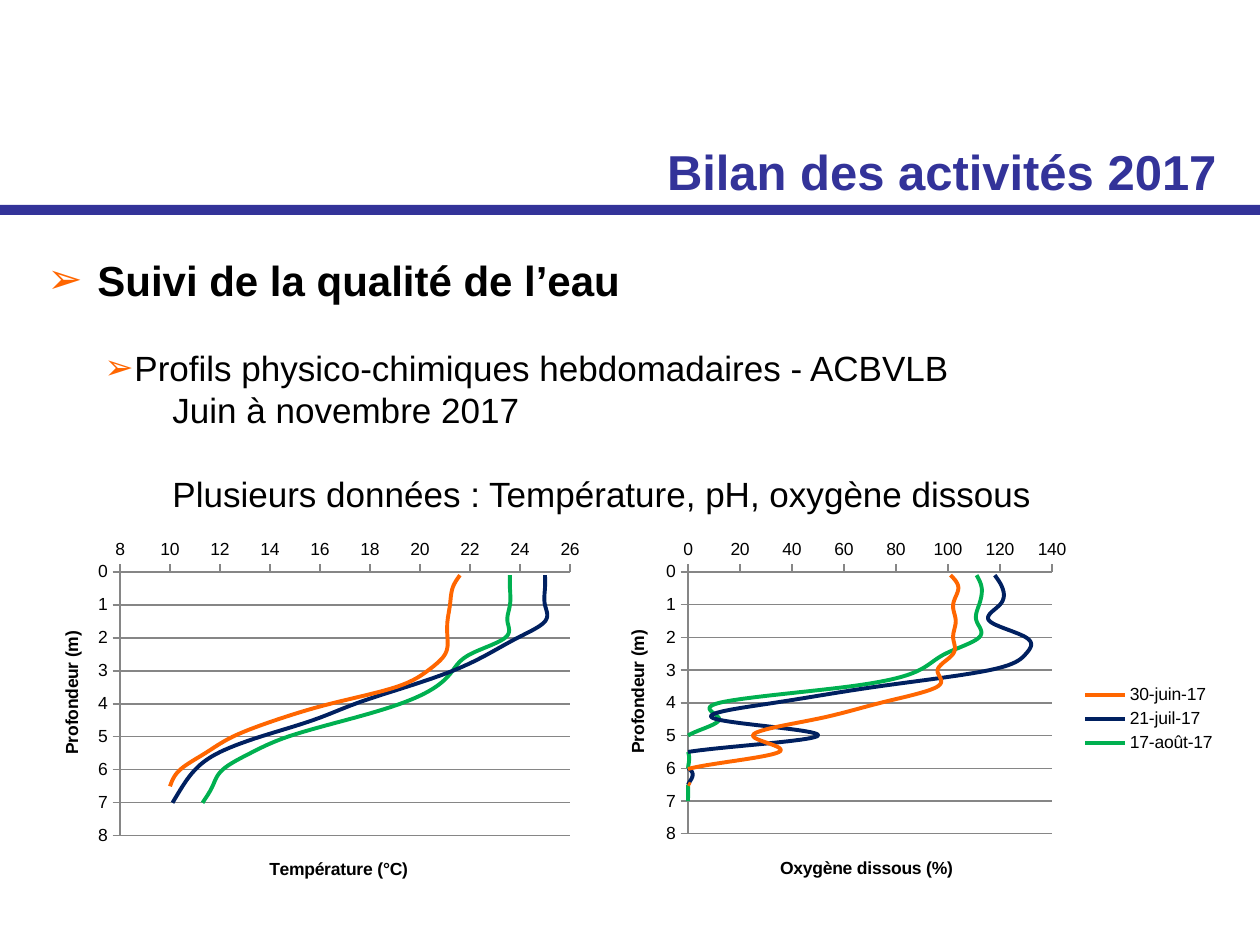
from itertools import zip_longest

from lxml import etree
from pptx import Presentation
from pptx.chart.data import XyChartData
from pptx.dml.color import RGBColor
from pptx.enum.chart import (XL_CHART_TYPE, XL_LEGEND_POSITION, XL_MARKER_STYLE,
                             XL_TICK_LABEL_POSITION, XL_TICK_MARK)
from pptx.enum.shapes import MSO_SHAPE
from pptx.enum.text import MSO_ANCHOR, PP_ALIGN
from pptx.oxml.ns import qn
from pptx.util import Pt

SMOOTH = XL_CHART_TYPE.XY_SCATTER_SMOOTH_NO_MARKERS
OUT, NONE = XL_TICK_MARK.OUTSIDE, XL_TICK_MARK.NONE
LOW = XL_TICK_LABEL_POSITION.LOW
FONT = "Arial"
COLORS = {"title": "333399", "bullet": "FF6600", "text": "000000", "axis": "868686"}
LINES = ["FF6600", "002060", "00B050"]

# Content
TITLE = "Bilan des activités 2017"
# text, size, bold, bullet, left px, indent px, space before pt
BODY = [
    ("Suivi de la qualité de l’eau", 24, True, True, 50, -50, 0),
    ("Profils physico-chimiques hebdomadaires - ACBVLB", 20, False, True, 87, -30, 24),
    ("Juin à novembre 2017", 20, False, False, 125, 0, 0),
    ("Plusieurs données : Température, pH, oxygène dissous", 20, False, False, 125, 0, 24),
]
DEPTHS = [0.1] + [n / 2 for n in range(1, 15)]
# Boxes are left, top, width, height on the slide, in px
CHARTS = [
    {"box": (35, 532, 556, 372), "plot": (120, 572, 450, 264),
     "x": ("Température (°C)", 266, 854), "y": ("Profondeur (m)", 57, 628),
     "scale": (8, 26, 2), "legend": None,
     "series": {
         "Series 1": [21.6, 21.3, 21.2, 21.1, 21.1, 21, 20.3, 19, 16.4, 14.2, 12.5,
                      11.4, 10.4, 10],
         "Series 2": [25, 25, 25, 25, 23.9, 22.7, 21.3, 19.4, 17.4, 15.7, 13.6,
                      11.9, 11, 10.5, 10.1],
         "Series 3": [23.6, 23.6, 23.6, 23.5, 23.4, 22, 21.3, 20.6, 19.2, 17, 14.7,
                      13.2, 12.1, 11.7, 11.3]}},
    {"box": (598, 532, 630, 372), "plot": (688, 572, 364, 262),
     "x": ("Oxygène dissous (%)", 777, 853), "y": ("Profondeur (m)", 623, 627),
     "scale": (0, 140, 20), "legend": (1079, 681, 140, 76),
     "series": {
         "30-juin-17": [101, 104, 102, 103, 102, 102, 96, 96, 74, 49, 25, 35, 1, 1],
         "21-juil-17": [118, 121, 120, 116, 130, 130, 116, 73, 33, 11, 50, 0, 0, 0, 0],
         "17-août-17": [111, 113, 112, 111, 112, 99, 89, 62, 12, 12, 0, 0, 0, 0, 0]}},
]


def px(n):
    return round(n * 914400 / 126)


def style(font, size, bold, color):
    font.name, font.size, font.bold = FONT, Pt(size), bold
    font.color.rgb = RGBColor.from_string(COLORS[color])


def draw_line(line, color, width):
    line.color.rgb = RGBColor.from_string(color)
    line.width = Pt(width)


def bullet(para, left, indent, shown):
    props = para._p.get_or_add_pPr()
    props.set("marL", str(px(left)))
    props.set("indent", str(px(indent)))
    if shown:
        color = etree.SubElement(props, qn("a:buClr"))
        etree.SubElement(color, qn("a:srgbClr"), val=COLORS["bullet"])
        etree.SubElement(props, qn("a:buFont"), typeface=FONT)
        etree.SubElement(props, qn("a:buChar"), char="➢")
    else:
        etree.SubElement(props, qn("a:buNone"))


def place(part, index, box, spot, inner=False):
    """Fix a chart part at a slide position, as shares of the chart box."""
    for old in part.findall(qn("c:layout")):
        part.remove(old)
    layout = etree.Element(qn("c:layout"))
    part.insert(index, layout)
    manual = etree.SubElement(layout, qn("c:manualLayout"))
    if inner:
        etree.SubElement(manual, qn("c:layoutTarget"), val="inner")
    for tag in ("xMode", "yMode"):
        etree.SubElement(manual, qn("c:" + tag), val="edge")
    left, top, wide, high = box
    shares = [(spot[0] - left) / wide, (spot[1] - top) / high]
    if len(spot) == 4:
        shares += [spot[2] / wide, spot[3] / high]
    for tag, share in zip("xywh", shares):
        etree.SubElement(manual, qn("c:" + tag), val=f"{share:.4f}")


def set_axis(axis, label, box, scale, turn):
    text, left, top = label
    axis.minimum_scale, axis.maximum_scale, axis.major_unit = scale
    axis.major_tick_mark, axis.minor_tick_mark = OUT, NONE
    axis.tick_labels.number_format = "General"
    axis.tick_labels.number_format_is_linked = False
    draw_line(axis.format.line, COLORS["axis"], 0.75)
    frame = axis.axis_title.text_frame
    frame.text = text
    style(frame.paragraphs[0].runs[0].font, 10, True, "text")
    frame._txBody.bodyPr.set("rot", str(turn))
    place(axis.axis_title._element, 1, box, (left, top))


def add_profile(slide, item):
    # Every series spans all depths; a missing reading stays blank
    data = XyChartData()
    for name, values in item["series"].items():
        series = data.add_series(name)
        for value, depth in zip_longest(values, DEPTHS):
            series.add_data_point(value, depth)
    box = item["box"]
    chart = slide.shapes.add_chart(SMOOTH, *map(px, box), data).chart
    chart.has_title = False
    style(chart.font, 10, False, "text")
    space = chart._chartSpace
    for blank in space.iter(qn("c:dispBlanksAs")):
        blank.set("val", "span")
    plot = chart.plots[0]
    plot.vary_by_categories = False
    for series, color in zip(plot.series, LINES):
        draw_line(series.format.line, color, 2.25)
        series.marker.style = XL_MARKER_STYLE.NONE
        for smooth in series._element.findall(qn("c:smooth")):
            smooth.set("val", "1")

    # Axes: depth grows downwards
    across, down = chart.category_axis, chart.value_axis
    set_axis(across, item["x"], box, item["scale"], 0)
    set_axis(down, item["y"], box, (0, 8, 1), -5400000)
    across.has_major_gridlines = False
    across.tick_label_position = LOW
    down.reverse_order = True
    down.has_major_gridlines = True
    draw_line(down.major_gridlines.format.line, COLORS["axis"], 0.75)
    place(space.find(".//" + qn("c:plotArea")), 0, box, item["plot"], inner=True)

    chart.has_legend = item["legend"] is not None
    if chart.has_legend:
        chart.legend.position = XL_LEGEND_POSITION.RIGHT
        chart.legend.include_in_layout = False
        place(chart.legend._element, 1, box, item["legend"])


def main():
    deck = Presentation()
    deck.slide_width, deck.slide_height = px(1260), px(945)
    slide = deck.slides.add_slide(deck.slide_layouts[5])

    # Title and rule
    title = slide.shapes.title
    title.left, title.top, title.width, title.height = map(px, (512, 135, 717, 72))
    title.text_frame.text = TITLE
    title.text_frame.vertical_anchor = MSO_ANCHOR.MIDDLE
    para = title.text_frame.paragraphs[0]
    para.alignment = PP_ALIGN.RIGHT
    style(para.runs[0].font, 28, True, "title")
    rule = slide.shapes.add_shape(MSO_SHAPE.RECTANGLE, *map(px, (0, 205, 1260, 10)))
    rule.shadow.inherit = False
    rule.fill.solid()
    rule.fill.fore_color.rgb = RGBColor.from_string(COLORS["title"])
    rule.line.fill.background()

    # Body text
    frame = slide.shapes.add_textbox(*map(px, (35, 248, 1079, 280))).text_frame
    frame.word_wrap = True
    for i, (text, size, bold, shown, left, indent, gap) in enumerate(BODY):
        para = frame.add_paragraph() if i else frame.paragraphs[0]
        para.text = text
        bullet(para, left, indent, shown)
        if gap:
            para.space_before = Pt(gap)
        style(para.runs[0].font, size, bold, "text")

    # Depth profiles
    for item in CHARTS:
        add_profile(slide, item)
    deck.save("out.pptx")


if __name__ == "__main__":
    main()
